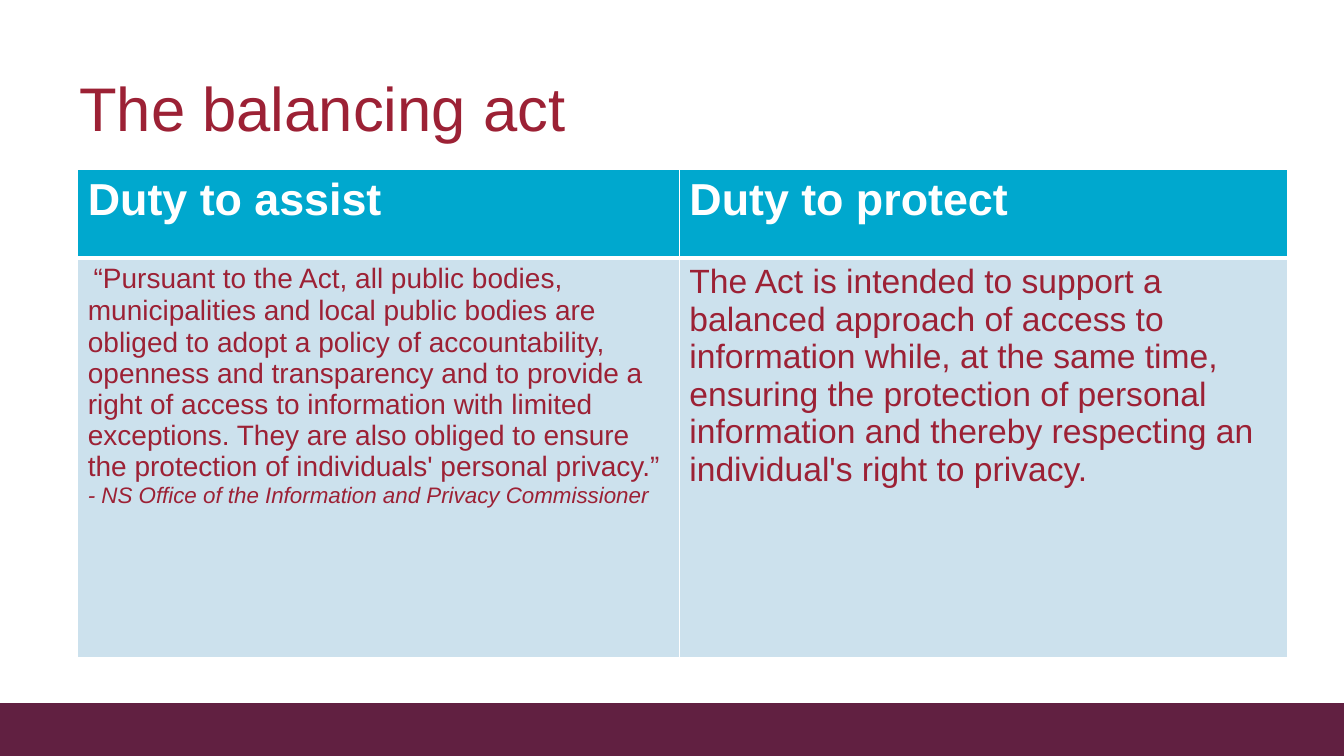
from lxml.etree import SubElement
from pptx import Presentation
from pptx.dml.color import RGBColor
from pptx.enum.shapes import MSO_SHAPE
from pptx.enum.text import MSO_ANCHOR
from pptx.oxml.ns import qn
from pptx.util import Cm, Pt

# Content: each cell holds paragraphs, each paragraph holds (text, size, font, style) runs
TITLE = "The balancing act"
HEADINGS = [
    [[("Duty to assist", 32, "Arial", "bold")]],
    [[("Duty to protect", 32, "Arial", "bold")]],
]
DUTIES = [
    [
        [
            (" ", 18, "Calibri", ""),
            ("“Pursuant to the Act, all public bodies, municipalities and local "
             "public bodies are obliged to adopt a policy of accountability, "
             "openness and transparency and to provide a right of access to "
             "information with limited exceptions. They are also obliged to ensure "
             "the protection of individuals' personal privacy.”", 20, "Arial", ""),
        ],
        [("- NS Office of the Information and Privacy Commissioner",
          16, "Arial", "italic")],
    ],
    [[("The Act is intended to support a balanced approach of access to "
       "information while, at the same time, ensuring the protection of personal "
       "information and thereby respecting an individual's right to privacy.",
       24, "Arial", "")]],
]

# Each row: cells, height in cm, fill, text colour, bottom border in points
WHITE, RED, PLUM = "FFFFFF", "9C2135", "612041"
ROWS = [
    (HEADINGS, 2.24, "00A8CE", WHITE, 3),
    (DUTIES, 10.06, "CCE1ED", RED, 1),
]
COLUMN_WIDTHS = [15.16, 15.34]
SLIDE_WIDTH, SLIDE_HEIGHT = 33.87, 19.05
FOOTER_TOP = 17.72


def color(hex_value):
    return RGBColor.from_string(hex_value)


def add_run(paragraph, text, size, font, style, text_color):
    run = paragraph.add_run()
    run.text = text
    run.font.size = Pt(size)
    run.font.name = font
    run.font.bold = style == "bold"
    run.font.italic = style == "italic"
    run.font.color.rgb = color(text_color)


def set_borders(cell, bottom_width):
    properties = cell._tc.get_or_add_tcPr()
    widths = {"a:lnL": 1, "a:lnR": 1, "a:lnT": 1, "a:lnB": bottom_width}
    for position, (side, width) in enumerate(widths.items()):
        border = SubElement(properties, qn(side), w=str(Pt(width)))
        solid = SubElement(border, qn("a:solidFill"))
        SubElement(solid, qn("a:srgbClr"), val=WHITE)
        properties.insert(position, border)


def fill_cell(cell, paragraphs, fill, text_color, bottom_width):
    cell.fill.solid()
    cell.fill.fore_color.rgb = color(fill)
    set_borders(cell, bottom_width)
    for index, runs in enumerate(paragraphs):
        frame = cell.text_frame
        paragraph = frame.add_paragraph() if index else frame.paragraphs[0]
        for run in runs:
            add_run(paragraph, *run, text_color)


presentation = Presentation()
presentation.slide_width = Cm(SLIDE_WIDTH)
presentation.slide_height = Cm(SLIDE_HEIGHT)
slide = presentation.slides.add_slide(presentation.slide_layouts[6])

# Footer band
footer = slide.shapes.add_shape(
    MSO_SHAPE.RECTANGLE, 0, Cm(FOOTER_TOP),
    Cm(SLIDE_WIDTH), Cm(SLIDE_HEIGHT - FOOTER_TOP))
footer.shadow.inherit = False
footer.fill.solid()
footer.fill.fore_color.rgb = color(PLUM)
footer.line.fill.background()

# Title
title = slide.shapes.add_textbox(Cm(1.75), Cm(0.97), Cm(29.21), Cm(3.68)).text_frame
title.word_wrap = True
title.vertical_anchor = MSO_ANCHOR.MIDDLE
title.paragraphs[0].line_spacing = 0.9
add_run(title.paragraphs[0], TITLE, 44, "Arial", "", RED)

# Table of duties
duties = slide.shapes.add_table(
    len(ROWS), len(COLUMN_WIDTHS), Cm(1.96), Cm(4.27),
    Cm(sum(COLUMN_WIDTHS)), Cm(sum(row[1] for row in ROWS))).table
for column, width in zip(duties.columns, COLUMN_WIDTHS):
    column.width = Cm(width)
for row, (cells, height, fill, text_color, bottom_width) in zip(duties.rows, ROWS):
    row.height = Cm(height)
    for cell, paragraphs in zip(row.cells, cells):
        fill_cell(cell, paragraphs, fill, text_color, bottom_width)

presentation.save("out.pptx")
